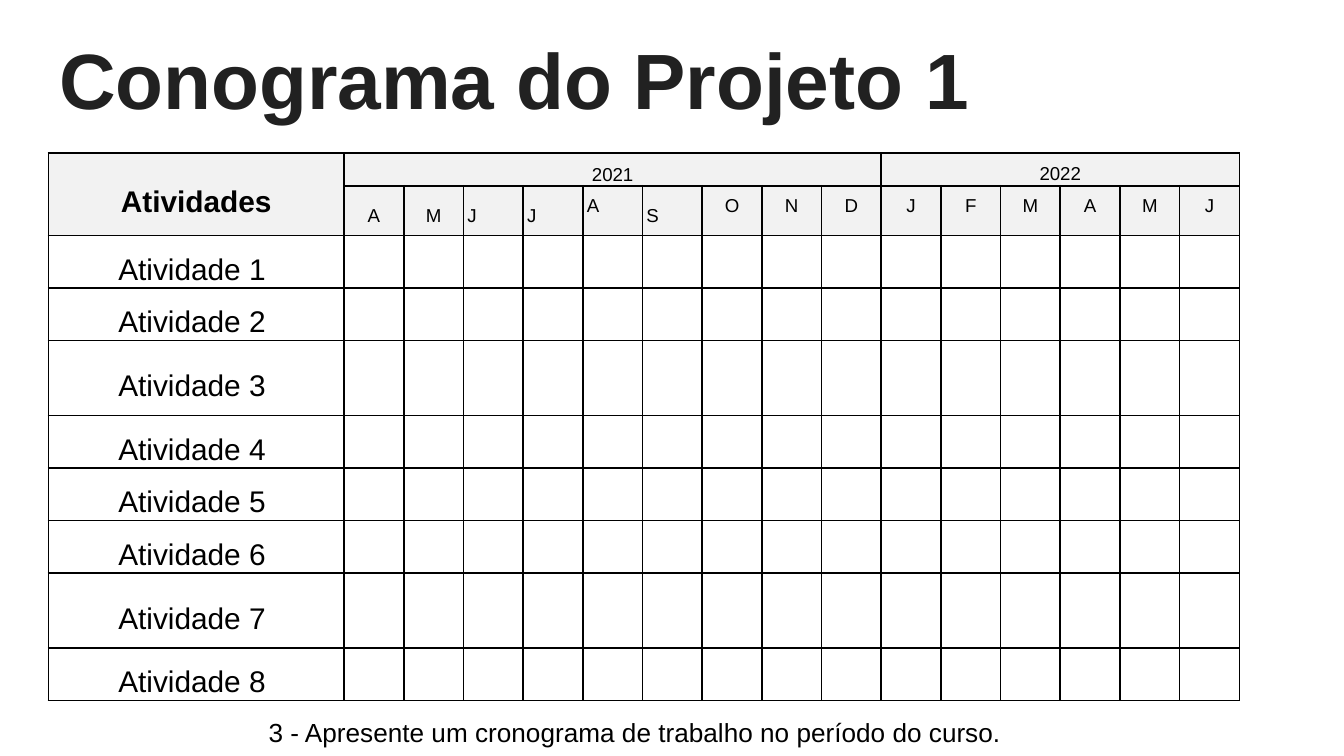
from lxml.etree import SubElement
from pptx import Presentation
from pptx.dml.color import RGBColor
from pptx.enum.text import MSO_ANCHOR, MSO_AUTO_SIZE, PP_ALIGN
from pptx.oxml.ns import qn
from pptx.util import Pt

BLACK = RGBColor(0x00, 0x00, 0x00)
INK = RGBColor(0x21, 0x21, 0x21)
GREY = RGBColor(0xF2, 0xF2, 0xF2)
WHITE = RGBColor(0xFF, 0xFF, 0xFF)

CENTER, JUSTIFY = PP_ALIGN.CENTER, PP_ALIGN.JUSTIFY
TOP, MIDDLE = MSO_ANCHOR.TOP, MSO_ANCHOR.MIDDLE

YEARS = [("2021", 1, 9, MIDDLE), ("2022", 10, 15, TOP)]
MONTHS = "AMJJASONDJFMAMJ"
JUSTIFIED_MONTHS = range(3, 7)
MIDDLE_MONTHS = (1, 2, 3, 4, 6)
ACTIVITIES = [f"Atividade {n} " for n in range(1, 9)]
TALL_ACTIVITIES = (3, 7)
UNFILLED_COLUMNS = (14, 15)


def write(tf, text, size=10, color=BLACK, bold=False, align=PP_ALIGN.LEFT,
          spacing=None, gap=None, font="Arial"):
    p = tf.paragraphs[0]
    p.alignment = align
    p.line_spacing = spacing
    if gap is not None:
        p.space_before = p.space_after = Pt(gap)
    r = p.add_run()
    r.text = text
    r.font.name, r.font.size, r.font.bold = font, Pt(size), bold
    r.font.color.rgb = color


class Deck:
    """Hold the style and current slide and add each kind of element."""

    def __init__(self, width, height):
        self.prs = Presentation()
        self.prs.slide_width, self.prs.slide_height = Pt(width), Pt(height)
        self.s = self.prs.slides.add_slide(self.prs.slide_layouts[5])

    def title(self, text, left, top, width, height):
        sp = self.s.shapes.title
        sp.left, sp.top, sp.width, sp.height = map(Pt, (left, top, width, height))
        tf = sp.text_frame
        tf.auto_size, tf.vertical_anchor = MSO_AUTO_SIZE.NONE, TOP
        tf.margin_left = tf.margin_right = tf.margin_top = tf.margin_bottom = Pt(7.2)
        write(tf, text, size=42, color=INK, bold=True, spacing=1.1)

    def caption(self, text, left, top, width, height):
        tf = self.s.shapes.add_textbox(*map(Pt, (left, top, width, height))).text_frame
        tf.word_wrap, tf.auto_size = True, MSO_AUTO_SIZE.SHAPE_TO_FIT_TEXT
        write(tf, text, size=14)

    def table(self, left, top, widths, heights):
        box = map(Pt, (left, top, sum(widths), sum(heights)))
        table = self.s.shapes.add_table(len(heights), len(widths), *box).table
        table.first_row = table.horz_banding = False
        for column, width in zip(table.columns, widths):
            column.width = Pt(width)
        for row, height in zip(table.rows, heights):
            row.height = Pt(height)
        for cell in table.iter_cells():
            self.border(cell)
        return table

    def border(self, cell):
        tc_pr = cell._tc.get_or_add_tcPr()
        for side in ("a:lnL", "a:lnR", "a:lnT", "a:lnB"):
            ln = SubElement(tc_pr, qn(side), w=str(Pt(1)))
            SubElement(SubElement(ln, qn("a:solidFill")), qn("a:srgbClr"), val=str(BLACK))

    def cell(self, cell, text="", fill=None, anchor=MIDDLE, align=CENTER, **fmt):
        cell.margin_left = cell.margin_right = Pt(2.16)
        cell.margin_top = cell.margin_bottom = 0
        cell.vertical_anchor = anchor
        if fill is None:
            cell.fill.background()
        else:
            cell.fill.solid()
            cell.fill.fore_color.rgb = fill
        if text:
            fmt.update(spacing=1.5, gap=6)
        write(cell.text_frame, text, align=align, **fmt)


def main():
    deck = Deck(720, 405)
    deck.title("Conograma do Projeto 1", 24.5, 4.3, 671, 63.4)

    widths = [158.4] + [32] * len(MONTHS)
    heights = [17.5, 26.6] + [40.3 if n in TALL_ACTIVITIES else 28.1
                              for n in range(1, len(ACTIVITIES) + 1)]
    table = deck.table(25.9, 82, widths, heights)

    table.cell(0, 0).merge(table.cell(1, 0))
    deck.cell(table.cell(0, 0), "Atividades", GREY, size=16, bold=True)
    deck.cell(table.cell(1, 0), fill=GREY)
    for year, first, last, anchor in YEARS:
        table.cell(0, first).merge(table.cell(0, last))
        deck.cell(table.cell(0, first), year, GREY, anchor)
        for col in range(first + 1, last + 1):
            deck.cell(table.cell(0, col), fill=GREY)
    for col, month in enumerate(MONTHS, 1):
        deck.cell(table.cell(1, col), month, GREY,
                  MIDDLE if col in MIDDLE_MONTHS else TOP,
                  JUSTIFY if col in JUSTIFIED_MONTHS else CENTER)
    for row, activity in enumerate(ACTIVITIES, 2):
        deck.cell(table.cell(row, 0), activity, size=16)
        for col in range(1, len(widths)):
            deck.cell(table.cell(row, col),
                      fill=None if col in UNFILLED_COLUMNS else WHITE)

    deck.caption("3 - Apresente um cronograma de trabalho no período do curso.",
                 136.8, 380.2, 455, 24.5)
    deck.prs.save("out.pptx")


if __name__ == "__main__":
    main()
